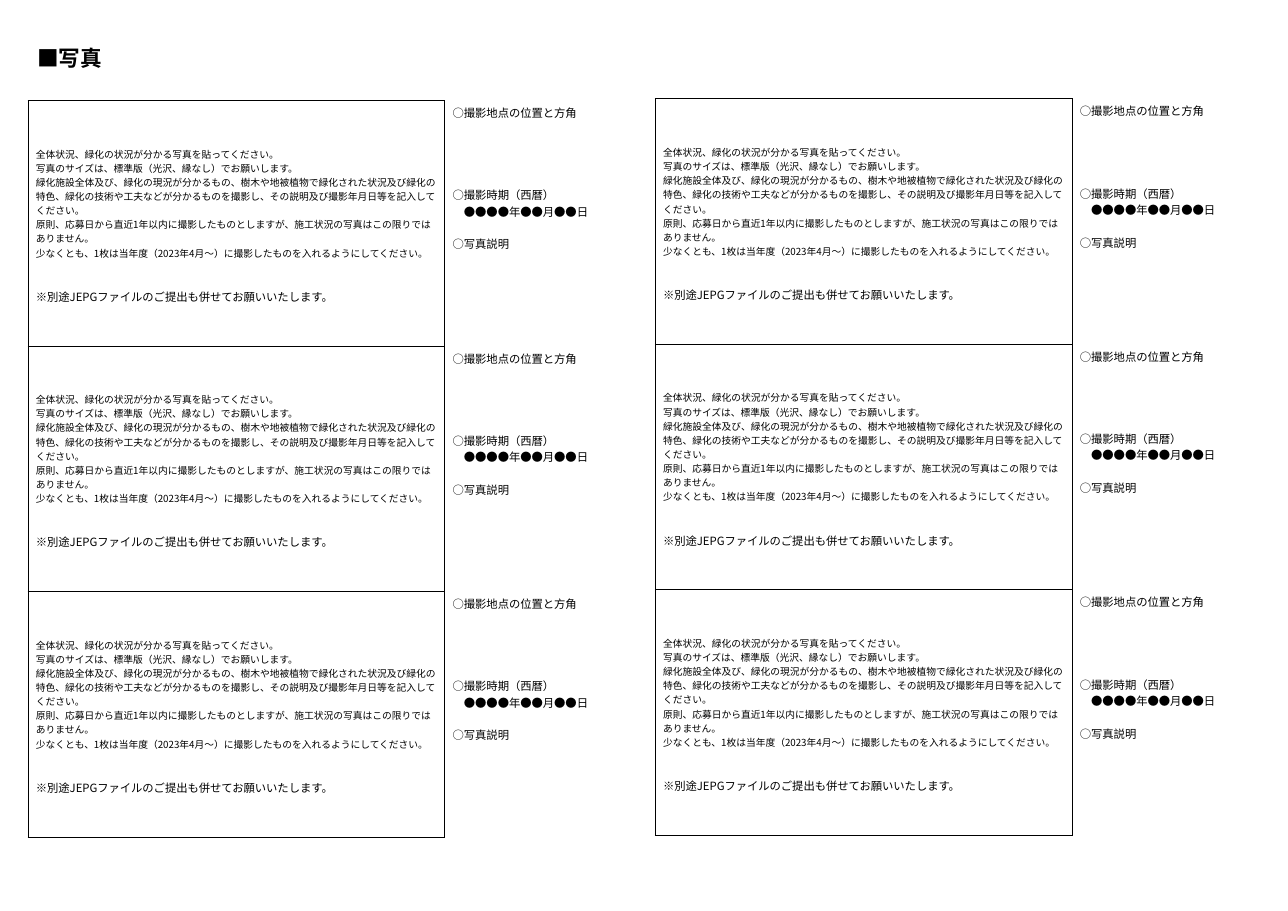
from lxml import etree
from pptx import Presentation
from pptx.dml.color import RGBColor
from pptx.enum import text
from pptx.oxml import ns
from pptx.util import Pt

BLACK = RGBColor(0x00, 0x00, 0x00)
FONT = "Noto Sans CJK JP"
SMALL, NORMAL, LARGE = 9, 10.5, 20
SMALL_LINE, NORMAL_LINE = 13.05, 15.2
INSET_X, INSET_Y = 7.2, 3.6

PHOTO_WIDTH, CAPTION_WIDTH = 385.2, 172.1
ROW_HEIGHT, ROW_COUNT = 226.8, 3

# Each line: wording, size, space above
PHOTO_LINES = [
    ("全体状況、緑化の状況が分かる写真を貼ってください。", SMALL, 0),
    ("写真のサイズは、標準版（光沢、縁なし）でお願いします。", SMALL, 0),
    ("緑化施設全体及び、緑化の現況が分かるもの、樹木や地被植物で緑化された状況及び緑化の"
     "特色、緑化の技術や工夫などが分かるものを撮影し、その説明及び撮影年月日等を記入してください。", SMALL, 0),
    ("原則、応募日から直近1年以内に撮影したものとしますが、施工状況の写真はこの限りではありません。", SMALL, 0),
    ("少なくとも、1枚は当年度（2023年4月～）に撮影したものを入れるようにしてください。", SMALL, 0),
    ("※別途JEPGファイルのご提出も併せてお願いいたします。", NORMAL, 2 * SMALL_LINE),
]
CAPTION_LINES = [
    ("○撮影地点の位置と方角", NORMAL, 0),
    ("○撮影時期（西暦）", NORMAL, 4 * NORMAL_LINE),
    ("　●●●●年●●月●●日", NORMAL, 0),
    ("○写真説明", NORMAL, NORMAL_LINE),
]


def write_lines(frame, lines, bold=False):
    for index, (wording, size, space) in enumerate(lines):
        para = frame.paragraphs[0] if index == 0 else frame.add_paragraph()
        para.alignment = text.PP_ALIGN.LEFT
        para.space_before = Pt(space)
        span = para.add_run()
        span.text = wording
        formats = {"name": FONT, "size": Pt(size), "bold": bold}
        for name, value in formats.items():
            setattr(span.font, name, value)
        span.font.color.rgb = BLACK
        east_asian = etree.SubElement(span.font._element, ns.qn("a:ea"))
        east_asian.set("typeface", FONT)


def set_borders(cell, drawn_sides):
    """Draw the named sides (of L, R, T, B) and clear the others."""
    properties = cell._tc.get_or_add_tcPr()
    for side in "LRTB":
        line = etree.SubElement(properties, ns.qn(f"a:ln{side}"), w=str(Pt(1)))
        if side in drawn_sides:
            fill = etree.SubElement(line, ns.qn("a:solidFill"))
            etree.SubElement(fill, ns.qn("a:srgbClr"), val=str(BLACK))
        else:
            etree.SubElement(line, ns.qn("a:noFill"))


def fill_cell(cell, lines, drawn_sides, top_gap=0):
    margins = {
        "margin_left": INSET_X, "margin_right": INSET_X,
        "margin_top": INSET_Y + top_gap, "margin_bottom": INSET_Y,
    }
    for name, value in margins.items():
        setattr(cell, name, Pt(value))
    cell.vertical_anchor = text.MSO_ANCHOR.TOP
    set_borders(cell, drawn_sides)
    cell.fill.background()
    write_lines(cell.text_frame, lines)


def add_photo_table(page, left, top):
    widths = (PHOTO_WIDTH, CAPTION_WIDTH)
    table = page.shapes.add_table(
        ROW_COUNT, len(widths), Pt(left), Pt(top),
        Pt(sum(widths)), Pt(ROW_COUNT * ROW_HEIGHT)).table
    table.first_row = table.horz_banding = False
    for column, width in zip(table.columns, widths):
        column.width = Pt(width)
    for row in table.rows:
        row.height = Pt(ROW_HEIGHT)
        photo, caption = row.cells
        fill_cell(photo, PHOTO_LINES, "LRTB", top_gap=3 * SMALL_LINE)
        fill_cell(caption, CAPTION_LINES, "L")


def add_heading(page, left, top, width, height):
    box = page.shapes.add_textbox(Pt(left), Pt(top), Pt(width), Pt(height))
    frame = box.text_frame
    frame.word_wrap = False
    frame.auto_size = text.MSO_AUTO_SIZE.SHAPE_TO_FIT_TEXT
    write_lines(frame, [("■写真", LARGE, 0)], bold=True)


def main():
    deck = Presentation()
    deck.slide_width, deck.slide_height = Pt(1190.2), Pt(841.7)
    page = deck.slides.add_slide(deck.slide_layouts[6])
    add_photo_table(page, 605.5, 91.4)
    add_heading(page, 27.4, 38.2, 75.6, 31.7)
    add_photo_table(page, 25.9, 92.9)
    deck.save("out.pptx")


if __name__ == "__main__":
    main()
